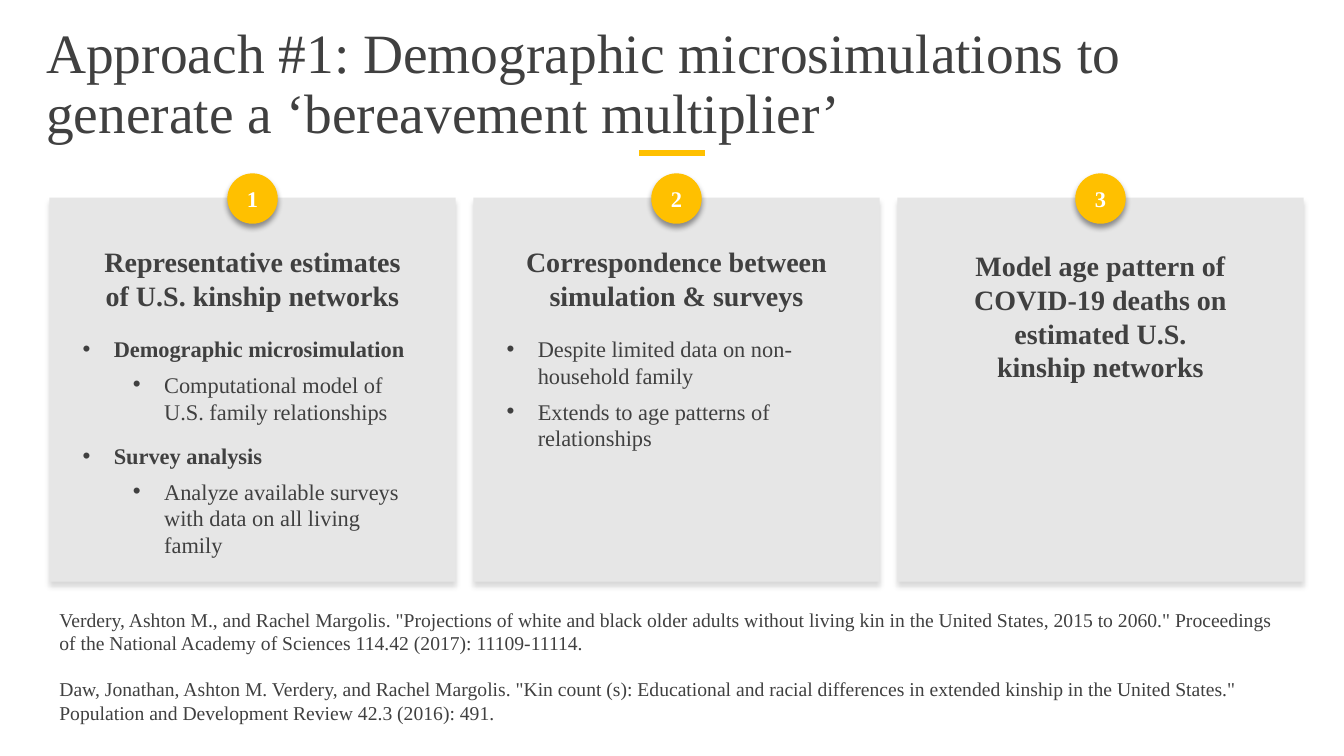
from dataclasses import dataclass

from lxml.etree import SubElement
from pptx import Presentation
from pptx.dml.color import RGBColor
from pptx.enum.shapes import MSO_CONNECTOR as Link, MSO_SHAPE as Form
from pptx.enum.text import MSO_ANCHOR as Anchor, PP_ALIGN as Align
from pptx.oxml.ns import qn
from pptx.util import Inches, Pt

FONT = "Times New Roman"
DARK, GOLD, GREY, WHITE = "404040", "FFC000", "E6E6E6", "FFFFFF"
CARD_X, CARD_Y, CARD_W, CARD_H = 0.49, 1.96, 4.03, 3.81
STEP = 4.205
DISC = 0.5


@dataclass
class Para:
    text: str
    size: float = 16
    bold: bool = False
    color: str = DARK
    align: Align = Align.LEFT
    level: int = 0
    bullet: bool = False
    before: float = 0
    spacing: float = 1.0


@dataclass
class Block:
    top: float
    height: float
    paras: list[Para]


@dataclass
class Card:
    head: str
    top: float
    width: float
    height: float
    blocks: list[Block]


def item(text: str, level: int = 0, bold: bool = False) -> Para:
    return Para(text, bold=bold, level=level, bullet=True, before=6)


def rgb(color: str) -> RGBColor:
    return RGBColor.from_string(color)


def write(frame, paras: list[Para], anchor: Anchor = Anchor.TOP) -> None:
    frame.word_wrap = True
    frame.vertical_anchor = anchor
    for i, para in enumerate(paras):
        line = frame.add_paragraph() if i else frame.paragraphs[0]
        line.alignment = para.align
        line.level = para.level
        line.line_spacing = para.spacing
        line.space_before = Pt(para.before)
        if para.bullet:
            props = line._p.get_or_add_pPr()
            props.set("marL", str(Inches(0.31 + 0.5 * para.level)))
            props.set("indent", str(-Inches(0.31)))
            SubElement(props, qn("a:buFont"), typeface="Arial")
            SubElement(props, qn("a:buChar"), char="•")
        run = line.add_run()
        run.text = para.text
        font = run.font
        font.name, font.size, font.bold = FONT, Pt(para.size), para.bold
        font.color.rgb = rgb(para.color)


def add_text(slide, x: float, y: float, w: float, h: float,
             paras: list[Para], anchor: Anchor = Anchor.TOP) -> None:
    box = slide.shapes.add_textbox(Inches(x), Inches(y), Inches(w), Inches(h))
    write(box.text_frame, paras, anchor)


def add_form(slide, form: Form, x: float, y: float, w: float, h: float,
             color: str, alpha: int):
    """Add a borderless shape with a soft shadow of alpha percent below it."""
    shape = slide.shapes.add_shape(form, Inches(x), Inches(y), Inches(w), Inches(h))
    shape.fill.solid()
    shape.fill.fore_color.rgb = rgb(color)
    shape.line.fill.background()
    shape.shadow.inherit = False
    effects = shape._element.spPr.find(qn("a:effectLst"))
    shadow = SubElement(effects, qn("a:outerShdw"), blurRad=str(Pt(4)),
                        dist=str(Pt(3)), dir="5400000", algn="t", rotWithShape="0")
    tint = SubElement(shadow, qn("a:srgbClr"), val="000000")
    SubElement(tint, qn("a:alpha"), val=str(alpha * 1000))
    return shape


def add_card(slide, card: Card, index: int) -> None:
    left = CARD_X + index * STEP
    mid = left + CARD_W / 2
    add_form(slide, Form.RECTANGLE, left, CARD_Y, CARD_W, CARD_H, GREY, 15)
    add_text(slide, mid - card.width / 2, card.top, card.width, card.height,
             [Para(card.head, 20, True, align=Align.CENTER)])
    for block in card.blocks:
        add_text(slide, left + 0.23, block.top, 3.58, block.height, block.paras)
    disc = add_form(slide, Form.OVAL, mid - DISC / 2, 1.72, DISC, DISC, GOLD, 40)
    write(disc.text_frame,
          [Para(str(index + 1), 16, True, WHITE, Align.CENTER)], Anchor.MIDDLE)


def add_rule(slide) -> None:
    rule = slide.shapes.add_connector(
        Link.STRAIGHT, Inches(6.34), Inches(1.52), Inches(6.99), Inches(1.52))
    rule.line.color.rgb = rgb(GOLD)
    rule.line.width = Pt(4)
    SubElement(rule._element.spPr, qn("a:effectLst"))


TITLE = "Approach #1: Demographic microsimulations to generate a ‘bereavement multiplier’"
CARDS = [
    Card("Representative estimates of U.S. kinship networks", 2.38, 3.25, 0.77, [
        Block(3.28, 0.99, [
            item("Demographic microsimulation", bold=True),
            item("Computational model of U.S. family relationships", 1)]),
        Block(4.34, 1.26, [
            item("Survey analysis", bold=True),
            item("Analyze available surveys with data on all living family", 1)]),
    ]),
    Card("Correspondence between simulation & surveys", 2.38, 3.25, 0.77, [
        Block(3.28, 1.26, [
            item("Despite limited data on non-household family"),
            item("Extends to age patterns of relationships")]),
    ]),
    Card("Model age pattern of COVID-19 deaths on estimated U.S. kinship networks",
         2.42, 2.83, 1.45, []),
]
SOURCES = [
    Para('Verdery, Ashton M., and Rachel Margolis. "Projections of white and black '
         'older adults without living kin in the United States, 2015 to 2060." '
         'Proceedings of the National Academy of Sciences 114.42 (2017): '
         '11109-11114.', 14),
    Para('Daw, Jonathan, Ashton M. Verdery, and Rachel Margolis. "Kin count (s): '
         'Educational and racial differences in extended kinship in the United '
         'States." Population and Development Review 42.3 (2016): 491.', 14, before=16),
]


def main() -> None:
    deck = Presentation()
    deck.slide_width, deck.slide_height = Inches(13.33), Inches(7.5)
    slide = deck.slides.add_slide(deck.slide_layouts[6])
    add_text(slide, 0.36, 0.4, 12.61, 0.89,
             [Para(TITLE, 39.6, spacing=0.9)], Anchor.MIDDLE)
    add_rule(slide)
    for index, card in enumerate(CARDS):
        add_card(slide, card, index)
    add_text(slide, CARD_X, 5.98, 12.35, 1.28, SOURCES)
    deck.save("out.pptx")


if __name__ == "__main__":
    main()
